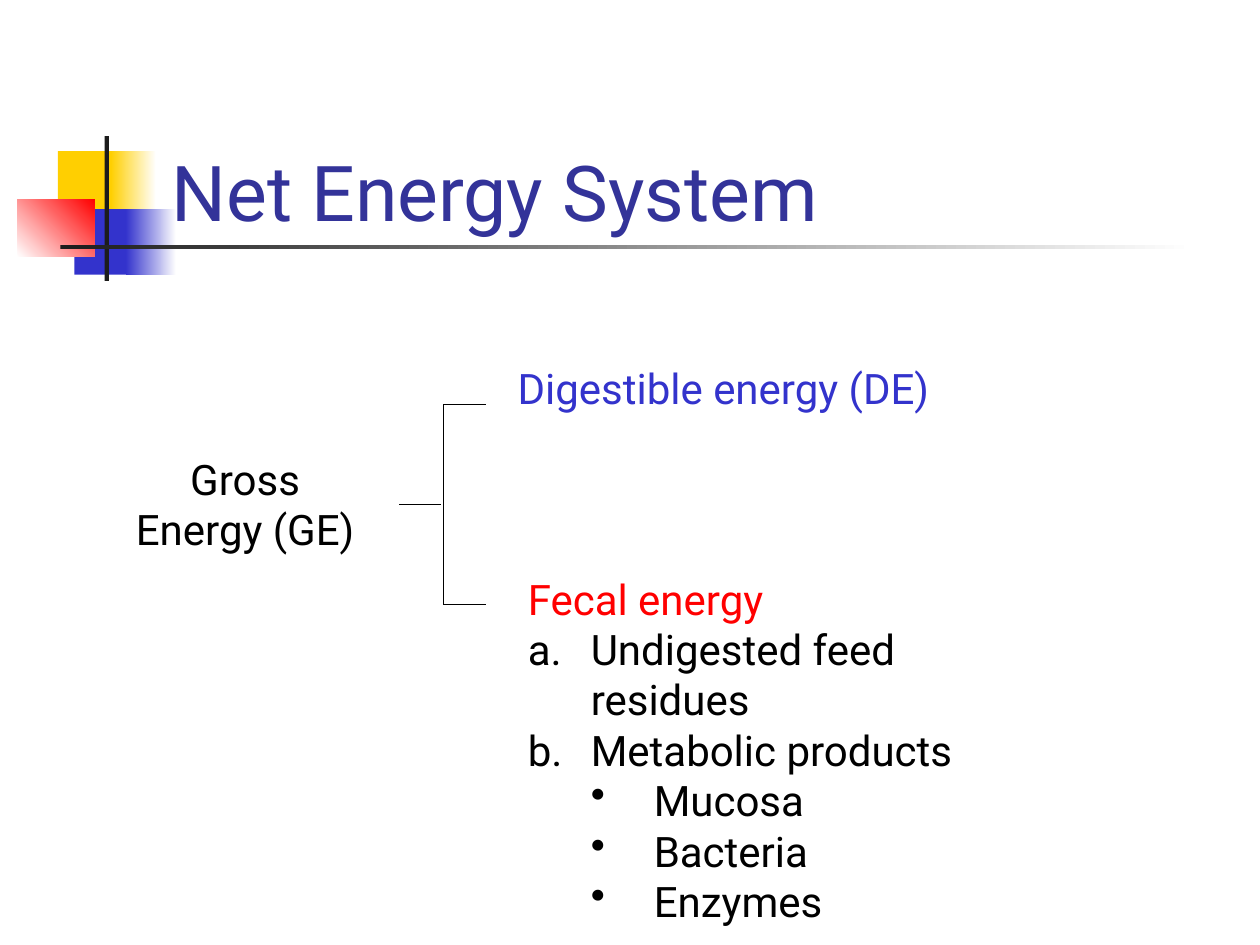
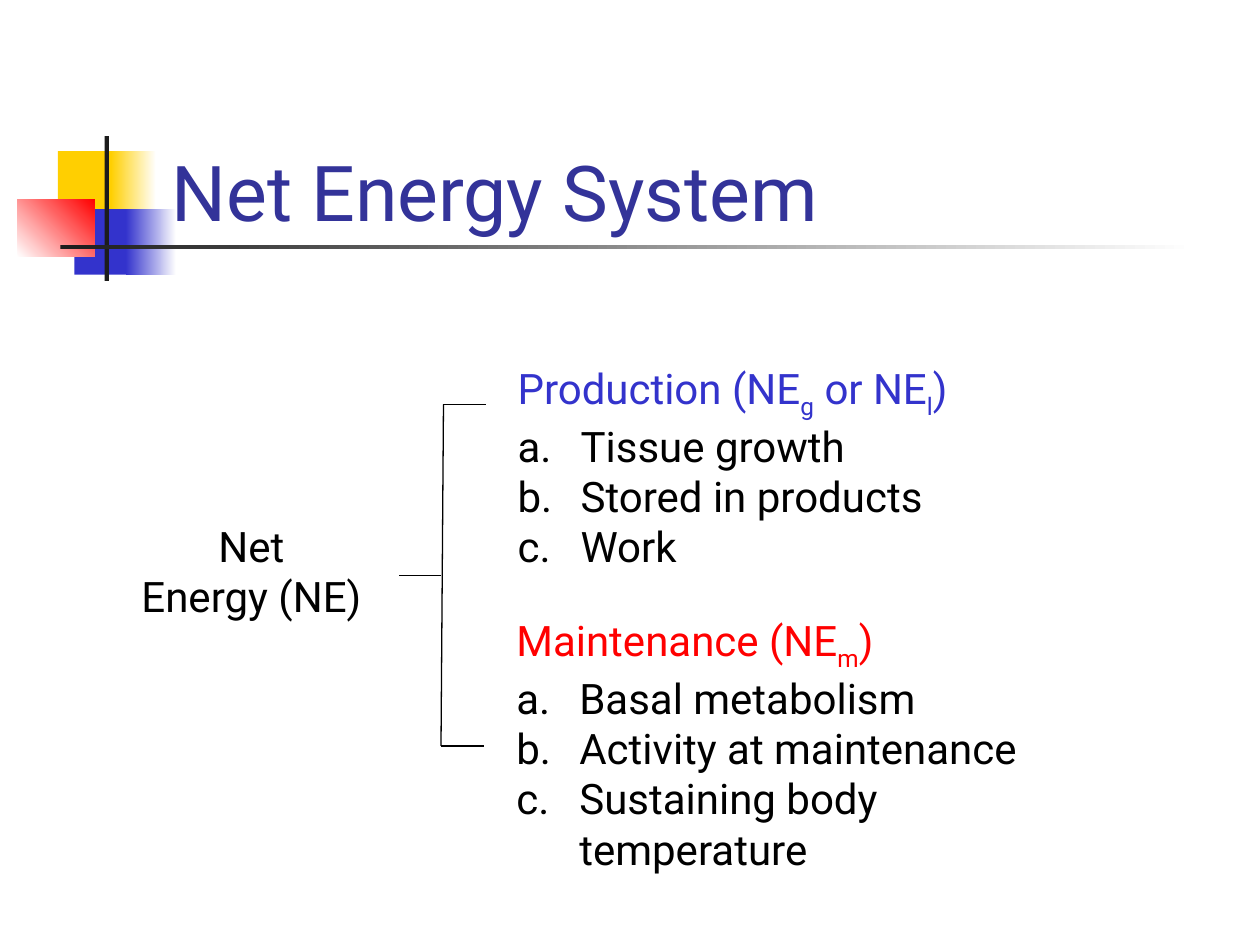
from dataclasses import dataclass

from lxml import etree
from pptx import Presentation
from pptx import util as u
from pptx.dml.color import RGBColor
from pptx.enum import shapes, text
from pptx.oxml.ns import qn


@dataclass(frozen=True)
class Theme:
    """Colours, type and grid that all slides share."""
    font: str = "Roboto"
    big: int = 44
    body: int = 24
    rule: float = 0.75
    title: str = "333399"
    ink: str = "000000"
    dark: str = "1C1C1C"
    gold: str = "FFCF01"
    blue: str = "3333CC"
    red: str = "FF0000"
    white: str = "FFFFFF"
    cell: int = u.Inches(0.1)


T = Theme()
COLS, ROWS = 100, 75
TITLE = (12.6, 6.8, 85.2, 12.5)
MOTIF = (1.4, 10.8, 93.4, 11.5)
LISTS = {
    "alpha": (0, 5, "buAutoNum", {"type": "alphaLcPeriod"}),
    "dot": (1, 10, "buChar", {"char": "•"}),
}


def grid(*vals):
    """Turn grid cells into lengths."""
    return [round(v * T.cell) for v in vals]


def apply(obj, vals):
    """Set each named value on an object."""
    for name, val in vals.items():
        setattr(obj, name, val)


def style(font, size, hue):
    """Give a font the shared face, a size and a colour."""
    apply(font, {"name": T.font, "size": u.Pt(size)})
    font.color.rgb = RGBColor.from_string(hue)


def block(slide, box, hues, angle=0):
    """Draw a plain or fading rectangle."""
    shape = slide.shapes.add_shape(shapes.MSO_SHAPE.RECTANGLE, *grid(*box))
    shape.shadow.inherit = False
    shape.line.fill.background()
    if len(hues) == 1:
        shape.fill.solid()
        shape.fill.fore_color.rgb = RGBColor.from_string(hues[0])
    else:
        shape.fill.gradient()
        shape.fill.gradient_angle = angle
        for stop, hue in zip(shape.fill.gradient_stops, hues):
            stop.color.rgb = RGBColor.from_string(hue)
    return shape


def motif(slide, layout, box):
    """Place the squares and crossed bars on the layout."""
    x, y, wide, high = box
    parts = [
        ((3.2, 1.2, 4.8, 5.2), [T.gold]),
        ((7.4, 1.2, 3.6, 5.2), [T.gold, T.white]),
        ((4.5, 5.8, 4.6, 5.2), [T.blue]),
        ((8.6, 5.8, 4, 5.2), [T.blue, T.white]),
        ((0, 5, 6.1, 4.6), [T.white, T.red], 45),
        ((6.9, 0, 0.35, high), [T.dark]),
        ((3.4, 8.65, wide - 3.4, 0.35), [T.dark, T.white]),
    ]
    for (dx, dy, w, h), *look in parts:
        shape = block(slide, (x + dx, y + dy, w, h), *look)
        layout.shapes.element.append(shape.element)


def head(slide, box, words):
    """Move and format the title."""
    title = slide.shapes.title
    apply(title, dict(zip(("left", "top", "width", "height"), grid(*box))))
    title.text = words
    apply(title.text_frame, {"vertical_anchor": text.MSO_ANCHOR.BOTTOM,
                             "auto_size": text.MSO_AUTO_SIZE.NONE})
    para = title.text_frame.paragraphs[0]
    para.alignment = text.PP_ALIGN.LEFT
    style(para.runs[0].font, T.big, T.title)


def mark(para, kind):
    """Add a hanging letter or bullet to a paragraph."""
    level, left, tag, attrs = LISTS[kind]
    para.level = level
    props = para._p.get_or_add_pPr()
    margin, hang = grid(left, -5)
    props.set("marL", str(margin))
    props.set("indent", str(hang))
    etree.SubElement(props, qn("a:" + tag), attrs)


def write(slide, box, lines):
    """Write lines of (kind, words, colour); odd parts between bars are subscripts."""
    frame = slide.shapes.add_textbox(*grid(*box)).text_frame
    frame.word_wrap = True
    for num, (kind, words, hue) in enumerate(lines):
        para = frame.add_paragraph() if num else frame.paragraphs[0]
        if kind in LISTS:
            mark(para, kind)
        if kind == "mid":
            para.alignment = text.PP_ALIGN.CENTER
        for pos, part in enumerate(words.split("|")):
            run = para.add_run()
            run.text = part
            style(run.font, T.body, hue)
            if pos % 2:
                run._r.get_or_add_rPr().set("baseline", "-25000")


def line(slide, *ends):
    """Draw a thin line between two points."""
    link = slide.shapes.add_connector(shapes.MSO_CONNECTOR.STRAIGHT, *grid(*ends))
    link.line.width = u.Pt(T.rule)
    link.line.color.rgb = RGBColor.from_string(T.ink)
    etree.SubElement(link.element.spPr, qn("a:effectLst"))


def fork(slide, box, lean=0):
    """Draw a stem and a two-pronged bracket in a box."""
    x, y, wide, high = box
    prong, stem = 3.4, 3.3
    joint, mid, foot = x + wide - prong, y + high / 2, y + high
    line(slide, joint, y, joint - lean, foot)
    line(slide, joint, y, joint + prong, y)
    line(slide, joint - lean, foot, joint - lean + prong, foot)
    line(slide, x, mid, x + stem, mid)


def split(deck, layout, root, trunk, lean, *leaves):
    """Build a slide that splits one energy into two parts."""
    slide = deck.slides.add_slide(layout)
    head(slide, TITLE, "Net Energy System")
    fork(slide, trunk, lean)
    box, words = root
    write(slide, box, [("mid", word, T.ink) for word in words])
    for box, hue, name, items in leaves:
        rows = [(kind, item, T.ink) for kind, item in items]
        write(slide, box, [("head", name, hue), *rows])
    return slide


def main():
    """Build and save the deck."""
    deck = Presentation()
    wide, high = grid(COLS, ROWS)
    apply(deck, {"slide_width": wide, "slide_height": high})
    layout = deck.slide_layouts[5]
    first = split(
        deck, layout,
        ((8.5, 35.5, 21.9, 9), ["Gross", "Energy (GE)"]),
        (31.7, 32.1, 6.9, 15.9), 0,
        ((40.1, 28.3, 36, 5), T.blue, "Digestible energy (DE)", []),
        ((40.9, 45, 43.5, 25), T.red, "Fecal energy", [
            ("alpha", "Undigested feed residues"),
            ("alpha", "Metabolic products"),
            ("dot", "Mucosa"), ("dot", "Bacteria"), ("dot", "Enzymes")]))
    motif(first, layout, MOTIF)
    split(
        deck, layout,
        ((9, 40.8, 21.9, 9), ["Net", "Energy (NE)"]),
        (31.7, 32.1, 6.9, 27.1), 0.2,
        ((40.1, 28.3, 38, 17), T.blue, "Production (NE|g| or NE|l|)", [
            ("alpha", "Tissue growth"),
            ("alpha", "Stored in products"),
            ("alpha", "Work")]),
        ((40, 48.3, 48, 21), T.red, "Maintenance (NE|m|)", [
            ("alpha", "Basal metabolism"),
            ("alpha", "Activity at maintenance"),
            ("alpha", "Sustaining body temperature")]))
    deck.save("out.pptx")


if __name__ == "__main__":
    main()
